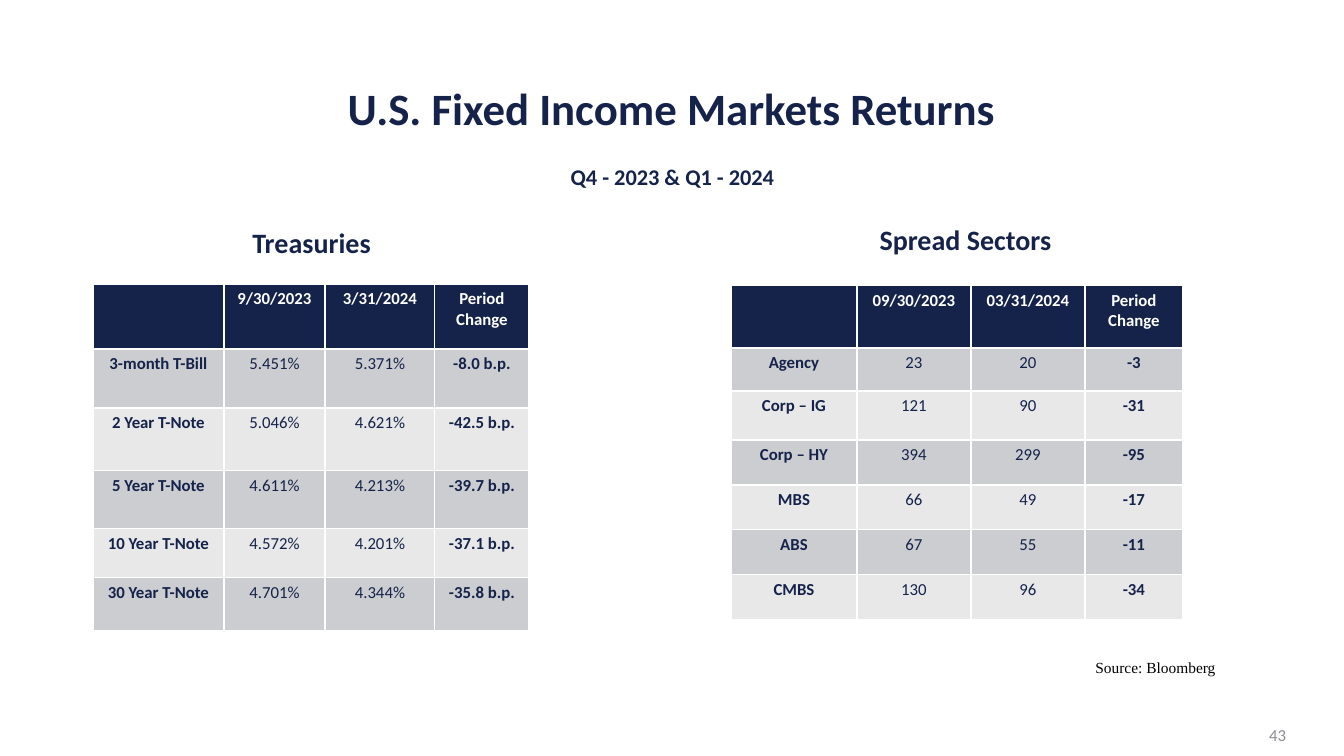
from pptx import Presentation
from pptx import util as u
from pptx.dml.color import RGBColor
from pptx.enum import text

NAVY = RGBColor(0x15, 0x23, 0x4A)
WHITE = RGBColor(0xFF, 0xFF, 0xFF)
BLACK = RGBColor(0x00, 0x00, 0x00)
GRAY = RGBColor(0x8C, 0x8D, 0x96)
BANDS = [RGBColor(0xCC, 0xCD, 0xD0), RGBColor(0xE8, 0xE8, 0xE9)]
CENTER, RIGHT = text.PP_ALIGN.CENTER, text.PP_ALIGN.RIGHT
TOP, MIDDLE = text.MSO_ANCHOR.TOP, text.MSO_ANCHOR.MIDDLE


def px(n):
    return u.Emu(round(n * 914400 / 100.8))


def write(p, words, size, color, bold, font="Calibri", align=CENTER):
    p.alignment = align
    r = p.add_run()
    r.text = words
    r.font.name = font
    r.font.size = u.Pt(size)
    r.font.bold = bold
    r.font.color.rgb = color


prs = Presentation()
prs.slide_width, prs.slide_height = px(1344), px(756)
s = prs.slides.add_slide(prs.slide_layouts[5])

title = s.shapes.title
title.left, title.top, title.width, title.height = px(214), px(86), px(915), px(50)
title.text_frame.vertical_anchor = MIDDLE
p = title.text_frame.paragraphs[0]
p.line_spacing = 0.9
write(p, "U.S. Fixed Income Markets Returns", 32, NAVY, True)

labels = [
    ("Q4 - 2023 & Q1 - 2024", (500, 158, 345, 37), 16, NAVY, True, "Calibri", CENTER, TOP, True),
    ("Treasuries", (139, 221, 345, 44), 20, NAVY, True, "Calibri", CENTER, TOP, True),
    ("Spread Sectors", (793, 218, 345, 44), 20, NAVY, True, "Calibri", CENTER, TOP, True),
    ("Source: Bloomberg", (1081, 653, 149, 29), 11, BLACK, False, "Times New Roman", CENTER, TOP, False),
    ("43", (994, 715, 302, 40), 12, GRAY, False, "Calibri", RIGHT, MIDDLE, True),
]
for words, box, size, color, bold, font, align, anchor, wrap in labels:
    tf = s.shapes.add_textbox(*map(px, box)).text_frame
    tf.word_wrap = wrap
    tf.vertical_anchor = anchor
    write(tf.paragraphs[0], words, size, color, bold, font, align)

treasuries = [
    ("", "9/30/2023", "3/31/2024", "Period Change"),
    ("3-month T-Bill", "5.451%", "5.371%", "-8.0 b.p."),
    ("2 Year T-Note", "5.046%", "4.621%", "-42.5 b.p."),
    ("5 Year T-Note", "4.611%", "4.213%", "-39.7 b.p."),
    ("10 Year T-Note", "4.572%", "4.201%", "-37.1 b.p."),
    ("30 Year T-Note", "4.701%", "4.344%", "-35.8 b.p."),
]
spreads = [
    ("", "09/30/2023", "03/31/2024", "Period\nChange"),
    ("Agency", "23", "20", "-3"),
    ("Corp – IG", "121", "90", "-31"),
    ("Corp – HY", "394", "299", "-95"),
    ("MBS", "66", "49", "-17"),
    ("ABS", "67", "55", "-11"),
    ("CMBS", "130", "96", "-34"),
]
tables = [
    (treasuries, 93, 284, [131, 101, 110, 94], [65, 59, 63, 58, 49, 53]),
    (spreads, 731, 285, [126, 114, 114, 98], [63, 43, 49, 45, 45, 45, 45]),
]
for data, left, top, widths, heights in tables:
    tbl = s.shapes.add_table(len(heights), len(widths), px(left), px(top),
                             px(sum(widths)), px(sum(heights))).table
    for col, width in zip(tbl.columns, widths):
        col.width = px(width)
    for i, (row, height) in enumerate(zip(data, heights)):
        tbl.rows[i].height = px(height)
        for j, words in enumerate(row):
            cell = tbl.cell(i, j)
            cell.fill.solid()
            cell.fill.fore_color.rgb = BANDS[(i - 1) % 2] if i else NAVY
            tf = cell.text_frame
            for k, line in enumerate(words.split("\n") if words else []):
                p = tf.add_paragraph() if k else tf.paragraphs[0]
                write(p, line, 12, NAVY if i else WHITE, i == 0 or j in (0, 3))

prs.save("out.pptx")
